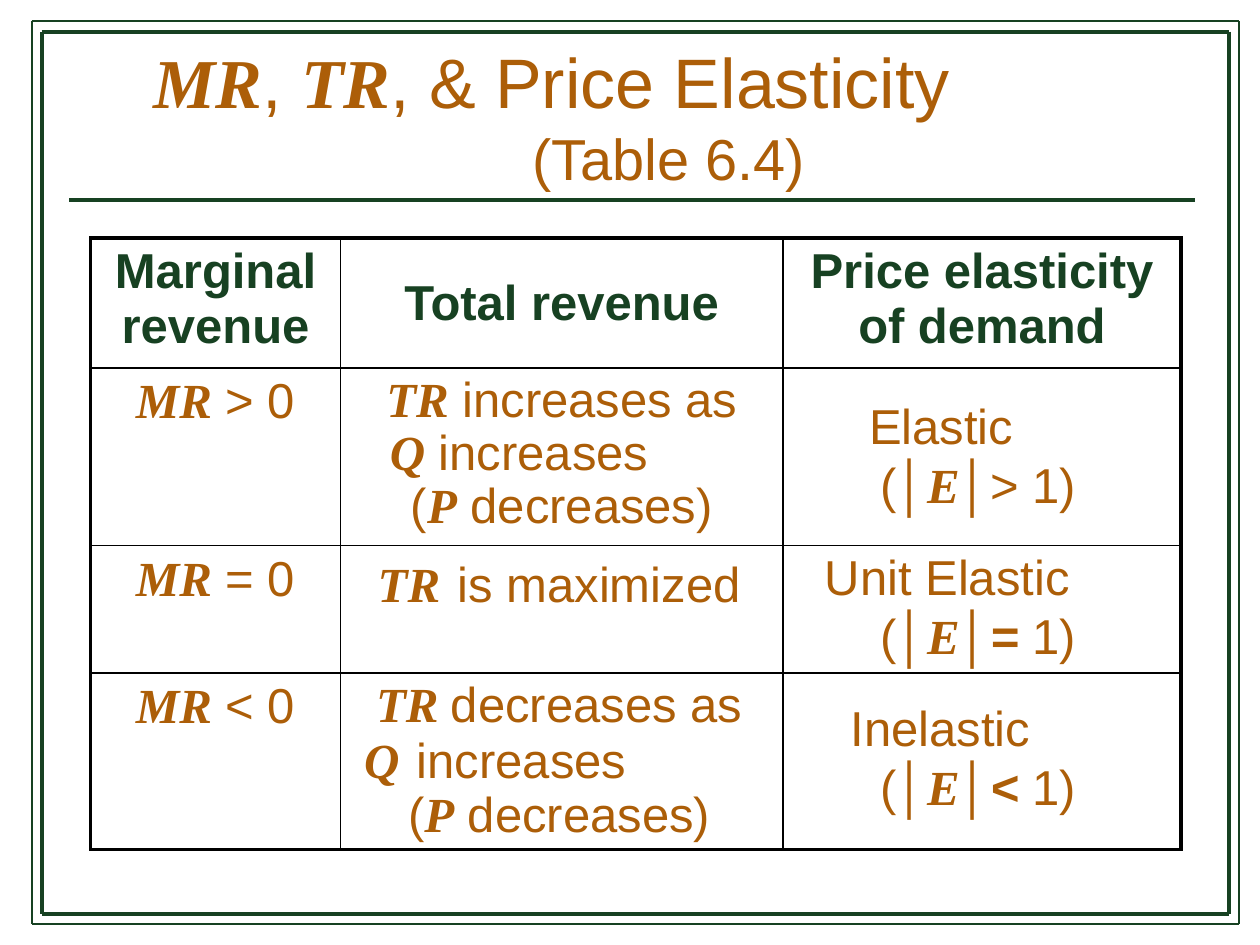
"""Build the slide on marginal revenue, total revenue and price elasticity."""
import pptx
import pptx.dml.color
import pptx.enum.shapes
import pptx.enum.text
import pptx.oxml.ns
import pptx.util
from lxml import etree

Cm, Pt = pptx.util.Cm, pptx.util.Pt
ALIGN = pptx.enum.text.PP_ALIGN
ANCHOR = pptx.enum.text.MSO_ANCHOR
qn = pptx.oxml.ns.qn
GREEN = pptx.dml.color.RGBColor(0x17, 0x41, 0x22)
ORANGE = pptx.dml.color.RGBColor(0xAC, 0x5E, 0x08)
INDIGO = pptx.dml.color.RGBColor(0x3C, 0x38, 0x6C)
BLACK = pptx.dml.color.RGBColor(0, 0, 0)

PLAIN = {}
VAR = dict(font="Times New Roman", bold=True, italic=True)
STRONG = dict(bold=True, italic=True)
HEAD = dict(color=GREEN, bold=True)
GAP = dict(font="Comic Neue", size=30, color=INDIGO)


def write(p, text, font="Arial", size=28, color=ORANGE, bold=False, italic=False):
    r = p.add_run()
    r.text = text
    r.font.name, r.font.size = font, Pt(size)
    r.font.color.rgb = color
    r.font.bold, r.font.italic = bold, italic


def write_lines(tf, lines, before=0, spacing=1.0):
    for i, (indent, runs) in enumerate(lines):
        p = tf.add_paragraph() if i else tf.paragraphs[0]
        p.alignment = ALIGN.CENTER if indent is None else ALIGN.LEFT
        p.line_spacing = spacing
        p.space_before = Pt(0 if i else before)
        if indent:
            p._p.get_or_add_pPr().set("marL", str(Cm(indent)))
        for text, style in runs:
            write(p, text, **style)


prs = pptx.Presentation()
prs.slide_width, prs.slide_height = Cm(25.4), Cm(19.05)
s = prs.slides.add_slide(prs.slide_layouts[5])

rules = [(1.4, 4.04, 24.08, 4.04, 2.25)]
for x1, y1, x2, y2, width in [(0.84, 0.64, 24.77, 18.42, 2.25), (0.64, 0.43, 24.97, 18.62, 1)]:
    rules += [(x1, y1, x2, y1, width), (x1, y2, x2, y2, width),
              (x1, y1, x1, y2, width), (x2, y1, x2, y2, width)]
for x1, y1, x2, y2, width in rules:
    line = s.shapes.add_connector(pptx.enum.shapes.MSO_CONNECTOR.STRAIGHT,
                                  Cm(x1), Cm(y1), Cm(x2), Cm(y2))
    line.line.color.rgb, line.line.width = GREEN, Pt(width)
    etree.SubElement(line._element.spPr, qn("a:effectLst"))

title = s.shapes.title
title.left, title.top, title.width, title.height = Cm(1.27), Cm(0.74), Cm(22.86), Cm(3.18)
tf = title.text_frame
tf.word_wrap = True
tf.auto_size = pptx.enum.text.MSO_AUTO_SIZE.NONE
tf.vertical_anchor = ANCHOR.MIDDLE
big, big_var = dict(size=40), dict(VAR, size=40)
write_lines(tf, [
    (1.57, [("MR", big_var), (", ", big), ("TR", big_var), (", & Price Elasticity", big)]),
    (None, [("(Table 6.4)", dict(size=33))]),
])

widths, heights = [5.03, 8.92, 8.03], [2.62, 3.58, 2.57, 3.56]
table = s.shapes.add_table(len(heights), len(widths), Cm(1.83), Cm(4.8),
                           Cm(sum(widths)), Cm(sum(heights))).table
table.first_row = table.horz_banding = False
for col, width in zip(table.columns, widths):
    col.width = Cm(width)
for row, height in zip(table.rows, heights):
    row.height = Cm(height)

cells = {(0, c): [(text, HEAD)] for c, text in
         enumerate(["Marginal revenue", "Total revenue", "Price elasticity of demand"])}
cells.update({(r, 0): [("MR", VAR), (f" {sign} 0", PLAIN)] for r, sign in enumerate(">=<", 1)})
for (r, c), runs in cells.items():
    write_lines(table.cell(r, c).text_frame, [(None, runs)], before=1)
table.cell(0, 1).vertical_anchor = ANCHOR.MIDDLE

for r in range(len(heights)):
    for c in range(len(widths)):
        cell = table.cell(r, c)
        tcPr = cell._tc.get_or_add_tcPr()
        outer = {"L": c == 0, "R": c == len(widths) - 1, "T": r == 0, "B": r == len(heights) - 1}
        for side, is_outer in outer.items():
            ln = etree.SubElement(tcPr, qn(f"a:ln{side}"), w=str(Pt(2.25 if is_outer else 1)))
            fill = etree.SubElement(ln, qn("a:solidFill"))
            etree.SubElement(fill, qn("a:srgbClr"), val=str(BLACK))
        cell.fill.background()

decreases = (None, [("(", PLAIN), ("P", VAR), (" decreases)", PLAIN)])
boxes = [
    (7.21, 7.44, 8.23, 3.48, 0.9, [
        (None, [("TR", VAR), (" increases as", PLAIN)]),
        (0.4, [("Q", VAR), (" increases", PLAIN)]),
        decreases]),
    (6.81, 10.97, 8.92, 1.52, 1.0, [
        (None, [("TR", VAR), (" ", GAP), ("is maximized", PLAIN)])]),
    (6.81, 13.59, 8.92, 3.56, 0.9, [
        (None, [("TR ", VAR), ("decreases as", PLAIN)]),
        (0.28, [("Q", VAR), (" ", GAP), ("increases", PLAIN)]),
        decreases]),
]
for top, name, indent, bar, value in [(7.85, "Elastic", 0.89, "│", "> 1)"),
                                      (10.9, "Unit Elastic", 0, "│=", " 1)"),
                                      (13.94, "Inelastic", 0.52, "│<", " 1)")]:
    boxes.append((16.38, top, 6.68, 2.64, 1.0, [
        (indent, [(name, PLAIN)]),
        (None, [("(│", PLAIN), ("E", VAR), (bar, STRONG), (value, PLAIN)])]))

for left, top, width, height, spacing, lines in boxes:
    sp = s.shapes.add_textbox(Cm(left), Cm(top), Cm(width), Cm(height))
    sp.text_frame.word_wrap = True
    write_lines(sp.text_frame, lines, before=3, spacing=spacing)

prs.save("out.pptx")
